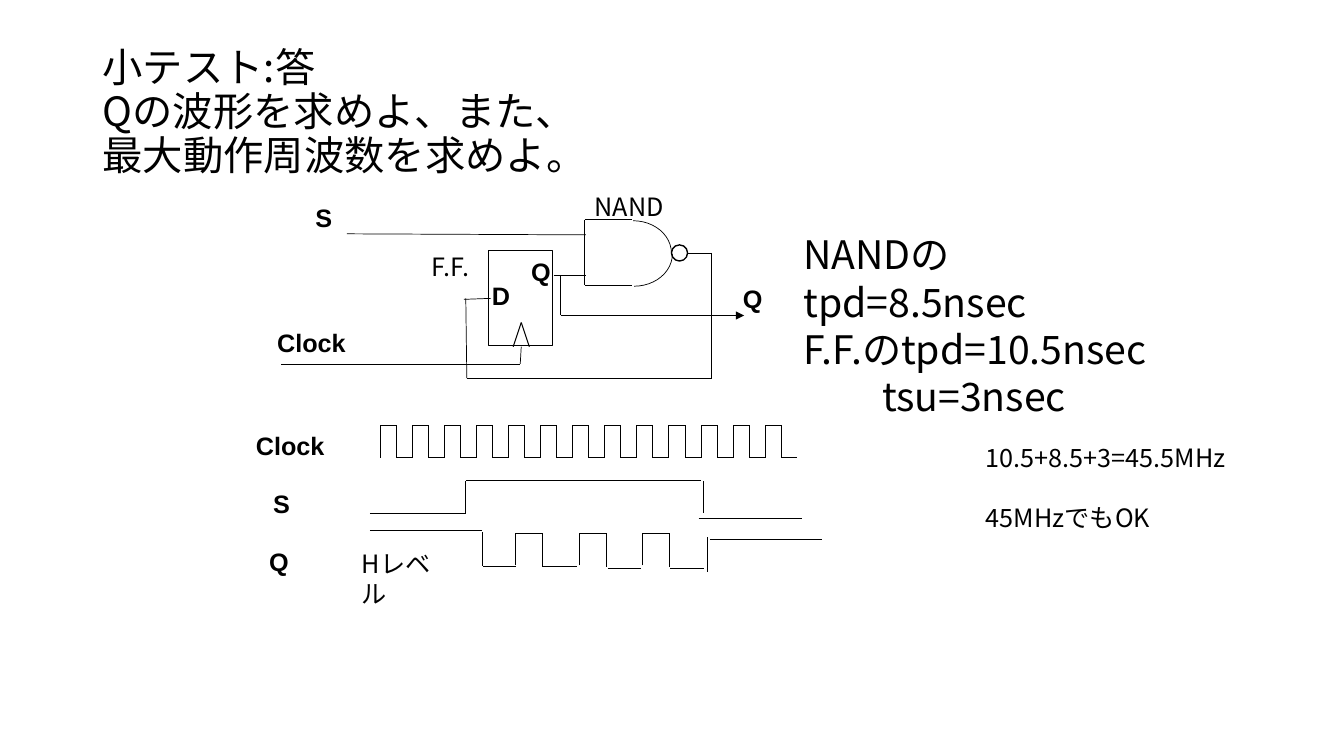
from dataclasses import dataclass
from itertools import pairwise

from lxml import etree
from pptx import Presentation
from pptx.dml.color import RGBColor
from pptx.enum.shapes import MSO_CONNECTOR, MSO_SHAPE
from pptx.enum.text import MSO_ANCHOR, PP_ALIGN
from pptx.oxml.ns import qn
from pptx.slide import Slide
from pptx.util import Inches, Pt

STRAIGHT = MSO_CONNECTOR.STRAIGHT
RECTANGLE, ARC, OVAL = MSO_SHAPE.RECTANGLE, MSO_SHAPE.ARC, MSO_SHAPE.OVAL
TOP, MIDDLE = MSO_ANCHOR.TOP, MSO_ANCHOR.MIDDLE
LEFT = PP_ALIGN.LEFT

Point = tuple[float, float]
Box = tuple[float, float, float, float]


@dataclass(frozen=True)
class Theme:
    ink: RGBColor = RGBColor(0, 0, 0)
    signal_font: str = "Arial"
    body_font: str = "Noto Sans CJK JP"
    title_size: float = 28.8
    delay_size: float = 28
    label_size: float = 18
    wire: float = 0.5
    wave: float = 0.75
    bubble: float = 1


THEME = Theme()


@dataclass(frozen=True)
class Line:
    text: str
    indent: float = 0
    space_before: float = 0


@dataclass(frozen=True)
class Label:
    box: Box
    lines: tuple[Line, ...]
    size: float = THEME.label_size
    font: str = THEME.body_font
    bold: bool = False
    anchor: MSO_ANCHOR = TOP
    spacing: float = 1


@dataclass(frozen=True)
class Trace:
    points: tuple[Point, ...]
    width: float = THEME.wire
    arrow: bool = False


@dataclass(frozen=True)
class Symbol:
    kind: MSO_SHAPE
    box: Box
    width: float
    flipped: bool = False


def signal(text: str, left: float, top: float, width: float) -> Label:
    return Label((left, top, width, 0.4), (Line(text),),
                 font=THEME.signal_font, bold=True)


LABELS = (
    Label((0.92, 0.4, 11.5, 1.45),
          (Line("小テスト:答"), Line("Qの波形を求めよ、また、"),
           Line("最大動作周波数を求めよ。")),
          size=THEME.title_size, anchor=MIDDLE, spacing=0.9),
    signal("D", 4.78, 2.73, 0.38),
    signal("Q", 5.17, 2.49, 0.4),
    signal("Q", 7.27, 2.76, 0.4),
    signal("Clock", 2.65, 3.2, 4.78),
    signal("S", 3.03, 1.96, 0.37),
    signal("Clock", 2.44, 4.22, 1.1),
    signal("S", 2.61, 4.8, 1.1),
    signal("Q", 2.57, 5.37, 1.1),
    Label((5.8, 1.85, 0.93, 0.71), (Line("NAND"),)),
    Label((4.18, 2.44, 0.64, 0.4), (Line("F.F."),)),
    Label((7.87, 2.24, 3.85, 1.99),
          (Line("NANDのtpd=8.5nsec"), Line("F.F.のtpd=10.5nsec"),
           Line("tsu=3nsec", indent=0.78)), size=THEME.delay_size),
    Label((3.49, 5.39, 1.1, 0.4), (Line("Hレベル"),)),
    Label((9.68, 4.34, 2.74, 1.01),
          (Line("10.5+8.5+3=45.5MHz"), Line("45MHzでもOK", space_before=21.4))),
)

SYMBOLS = (
    Symbol(RECTANGLE, (4.85, 2.49, 0.63, 0.94), THEME.wave),
    Symbol(ARC, (5.9, 2.19, 0.76, 0.64), THEME.wire),
    Symbol(ARC, (5.91, 2.2, 0.76, 0.64), THEME.wire, flipped=True),
    Symbol(OVAL, (6.66, 2.43, 0.16, 0.16), THEME.bubble),
)

CIRCUIT = (
    Trace(((5.09, 3.44), (5.17, 3.2), (5.25, 3.44)), THEME.wave),
    Trace(((6.27, 2.18), (5.8, 2.18), (5.8, 2.83), (6.27, 2.83))),
    Trace(((3.44, 2.32), (5.81, 2.33))),
    Trace(((5.49, 2.73), (5.81, 2.73))),
    Trace(((5.56, 2.73), (5.56, 3.13))),
    Trace(((5.56, 3.13), (7.38, 3.13)), arrow=True),
    Trace(((6.82, 2.51), (7.06, 2.51), (7.06, 3.75), (4.63, 3.75), (4.62, 2.96))),
    Trace(((4.6, 2.97), (4.87, 2.96))),
    Trace(((2.79, 3.61), (5.16, 3.61), (5.17, 3.44))),
)

S_WAVE = (
    Trace(((3.67, 5.09), (4.62, 5.09), (4.62, 4.77), (6.95, 4.77)), THEME.wave),
    Trace(((6.98, 4.77), (6.98, 5.09)), THEME.wave),
    Trace(((6.93, 5.14), (7.95, 5.14)), THEME.wave),
)


def clock_wave() -> list[Trace]:
    start, last, cycles = 3.77, 7.59, 13
    high, low = 4.22, 4.54
    period = (last - start) / (cycles - 1)
    rises = [start + period * cycle for cycle in range(cycles)]
    return [Trace(((x, low), (x, high), (x + period / 2, high),
                   (x + period / 2, low), (x + period, low)), THEME.wave)
            for x in rises]


def q_wave() -> list[Trace]:
    high, pulse, gap = 5.29, 0.27, 0.33
    pulses = [((x, 5.61), (x, high), (x + pulse, high), (x + pulse, 5.63))
              for x in (5.11, 5.75, 6.37)]
    lows = [((x, y), (x + gap, y))
            for x, y in ((4.79, 5.62), (5.39, 5.62), (6.03, 5.64), (6.65, 5.64))]
    edges = [((3.67, 5.26), (4.78, 5.26)), ((4.79, 5.28), (4.79, 5.62)),
             ((7.02, 5.33), (7.02, 5.67)), ((7.04, 5.35), (8.15, 5.35))]
    return [Trace(points, THEME.wave) for points in pulses + lows + edges]


def draw_trace(slide: Slide, trace: Trace) -> None:
    for start, end in pairwise(trace.points):
        segment = slide.shapes.add_connector(
            STRAIGHT, *(Inches(value) for value in start + end))
        segment.line.color.rgb = THEME.ink
        segment.line.width = Pt(trace.width)
        if trace.arrow:
            etree.SubElement(segment.line._get_or_add_ln(), qn("a:tailEnd"),
                             type="triangle")
        etree.SubElement(segment._element.spPr, qn("a:effectLst"))


def draw_symbol(slide: Slide, symbol: Symbol) -> None:
    outline = slide.shapes.add_shape(
        symbol.kind, *(Inches(value) for value in symbol.box))
    outline.shadow.inherit = False
    outline.fill.background()
    outline.line.color.rgb = THEME.ink
    outline.line.width = Pt(symbol.width)
    if symbol.flipped:
        outline._element.spPr.get_or_add_xfrm().set("flipV", "1")


def draw_label(slide: Slide, label: Label) -> None:
    frame = slide.shapes.add_textbox(
        *(Inches(value) for value in label.box)).text_frame
    frame.word_wrap = True
    frame.vertical_anchor = label.anchor
    for index, line in enumerate(label.lines):
        paragraph = frame.add_paragraph() if index else frame.paragraphs[0]
        paragraph.alignment = LEFT
        paragraph.line_spacing = label.spacing
        paragraph.space_before = Pt(line.space_before)
        properties = paragraph._p.get_or_add_pPr()
        properties.set("marL", str(Inches(line.indent)))
        run = paragraph.add_run()
        run.text = line.text
        run.font.name = label.font
        run.font.size = Pt(label.size)
        run.font.bold = label.bold
        run.font.color.rgb = THEME.ink
        etree.SubElement(run._r.get_or_add_rPr(), qn("a:ea"), typeface=label.font)


def main() -> None:
    presentation = Presentation()
    presentation.slide_width = Inches(13.33)
    presentation.slide_height = Inches(7.5)
    slide = presentation.slides.add_slide(presentation.slide_layouts[6])
    for symbol in SYMBOLS:
        draw_symbol(slide, symbol)
    for trace in (*CIRCUIT, *clock_wave(), *S_WAVE, *q_wave()):
        draw_trace(slide, trace)
    for label in LABELS:
        draw_label(slide, label)
    presentation.save("out.pptx")


if __name__ == "__main__":
    main()
